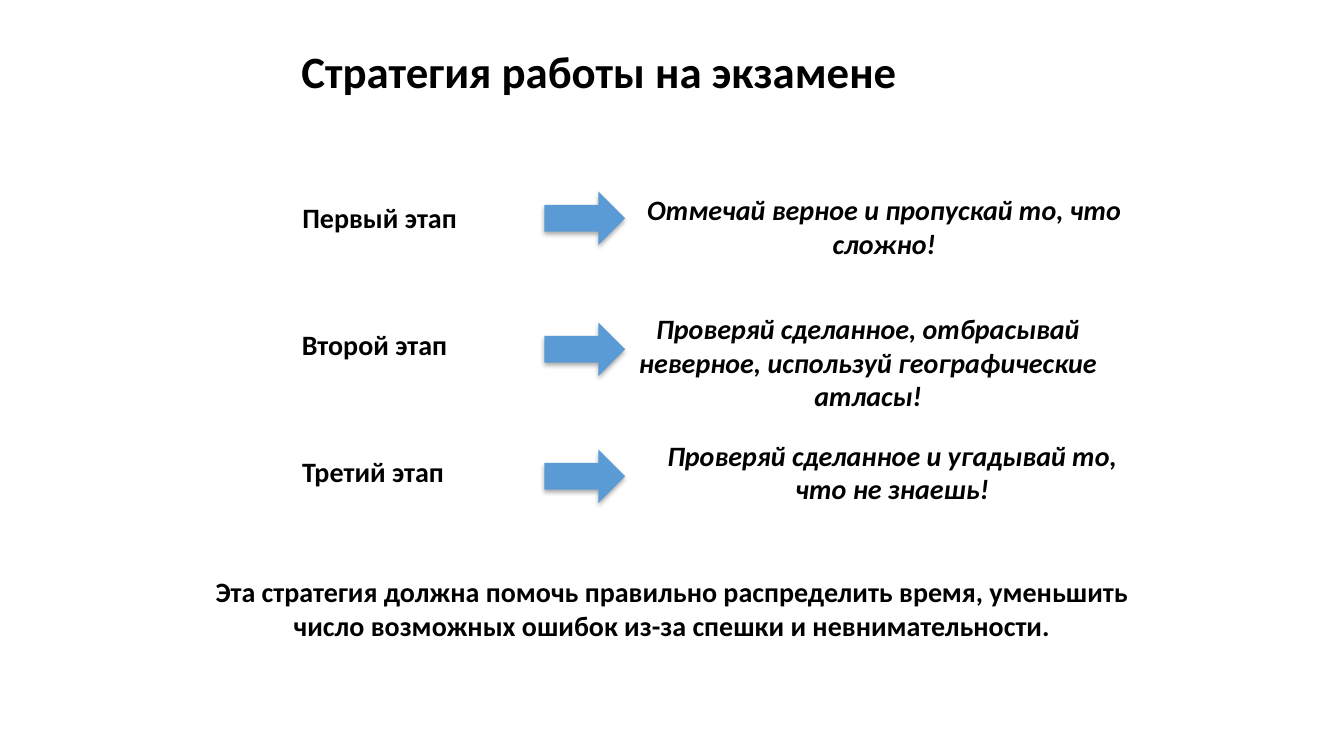
import pptx
import pptx.util
import pptx.dml.color
import pptx.enum.shapes
import pptx.enum.text
import pptx.oxml
import pptx.oxml.ns

Inches = pptx.util.Inches
ALIGN = pptx.enum.text.PP_ALIGN
FIT = pptx.enum.text.MSO_AUTO_SIZE
HUES = {"ink": "000000", "arrow": "5B9BD5"}
FONT = "Calibri"
STEP = 1.26
STAGES = [
    ("Первый этап", 1.75, -0.04, (3.38, -0.08, 0.77),
     "Отмечай верное и пропускай то, что сложно!"),
    ("Второй этап", 1.65, 0, (3.22, -0.16, 1.11),
     "Проверяй сделанное, отбрасывай неверное, используй географические атласы!"),
    ("Третий этап", 1.62, 0, (3.46, -0.16, 0.77),
     "Проверяй сделанное и угадывай то, что не знаешь!"),
]
CLOSING = ("Эта стратегия должна помочь правильно распределить время, уменьшить "
           "число возможных ошибок из-за спешки и невнимательности.")


def color(name):
    return pptx.dml.color.RGBColor.from_string(HUES[name])


def write(frame, text, size, align, slant=False):
    frame.text = text
    line = frame.paragraphs[0]
    line.alignment = align
    font = line.runs[0].font
    font.name = FONT
    font.size = pptx.util.Pt(size)
    font.bold = True
    font.italic = slant
    font.color.rgb = color("ink")


def add_text(slide, box, text, wrap=True, slant=False):
    frame = slide.shapes.add_textbox(*map(Inches, box)).text_frame
    frame.word_wrap = wrap
    frame.auto_size = FIT.SHAPE_TO_FIT_TEXT
    write(frame, text, 20, ALIGN.CENTER, slant)


def add_title(slide, box, text):
    title = slide.shapes.title
    title.left, title.top, title.width, title.height = map(Inches, box)
    frame = title.text_frame
    write(frame, text, 32, ALIGN.LEFT)
    frame.auto_size = FIT.NONE
    frame.word_wrap = True
    frame.vertical_anchor = pptx.enum.text.MSO_ANCHOR.MIDDLE
    frame.paragraphs[0].line_spacing = 0.9


def add_arrow(slide, box):
    arrow = slide.shapes.add_shape(
        pptx.enum.shapes.MSO_SHAPE.RIGHT_ARROW, *map(Inches, box))
    arrow.fill.solid()
    arrow.fill.fore_color.rgb = color("arrow")
    arrow.line.fill.background()
    arrow.shadow.inherit = False
    shade = pptx.oxml.parse_xml(
        f'<a:outerShdw {pptx.oxml.ns.nsdecls("a")} blurRad="{pptx.util.Pt(3.5)}" '
        f'dist="{pptx.util.Pt(2.2)}" dir="5400000" algn="ctr" rotWithShape="0">'
        f'<a:srgbClr val="{HUES["ink"]}"><a:alpha val="32000"/></a:srgbClr>'
        '</a:outerShdw>')
    arrow._element.spPr.find(pptx.oxml.ns.qn("a:effectLst")).append(shade)


def add_stage(slide, left, top, stage):
    label, width, shift, (across, down, height), advice = stage
    add_arrow(slide, (left + 2.51, top + shift, 0.8, 0.53))
    add_text(slide, (left, top, width, 0.44), label, wrap=False)
    add_text(slide, (left + across, top + down, 5, height), advice, slant=True)


def main():
    deck = pptx.Presentation()
    deck.slide_width = Inches(13.33)
    deck.slide_height = Inches(7.5)
    slide = deck.slides.add_slide(deck.slide_layouts[5])
    add_title(slide, (2.89, 0.15, 8.23, 1.16), "Стратегия работы на экзамене")
    for row, stage in enumerate(STAGES):
        add_stage(slide, 2.89, 1.94 + row * STEP, stage)
    add_text(slide, (1.71, 5.65, 9.91, 0.77), CLOSING)
    deck.save("out.pptx")


if __name__ == "__main__":
    main()
